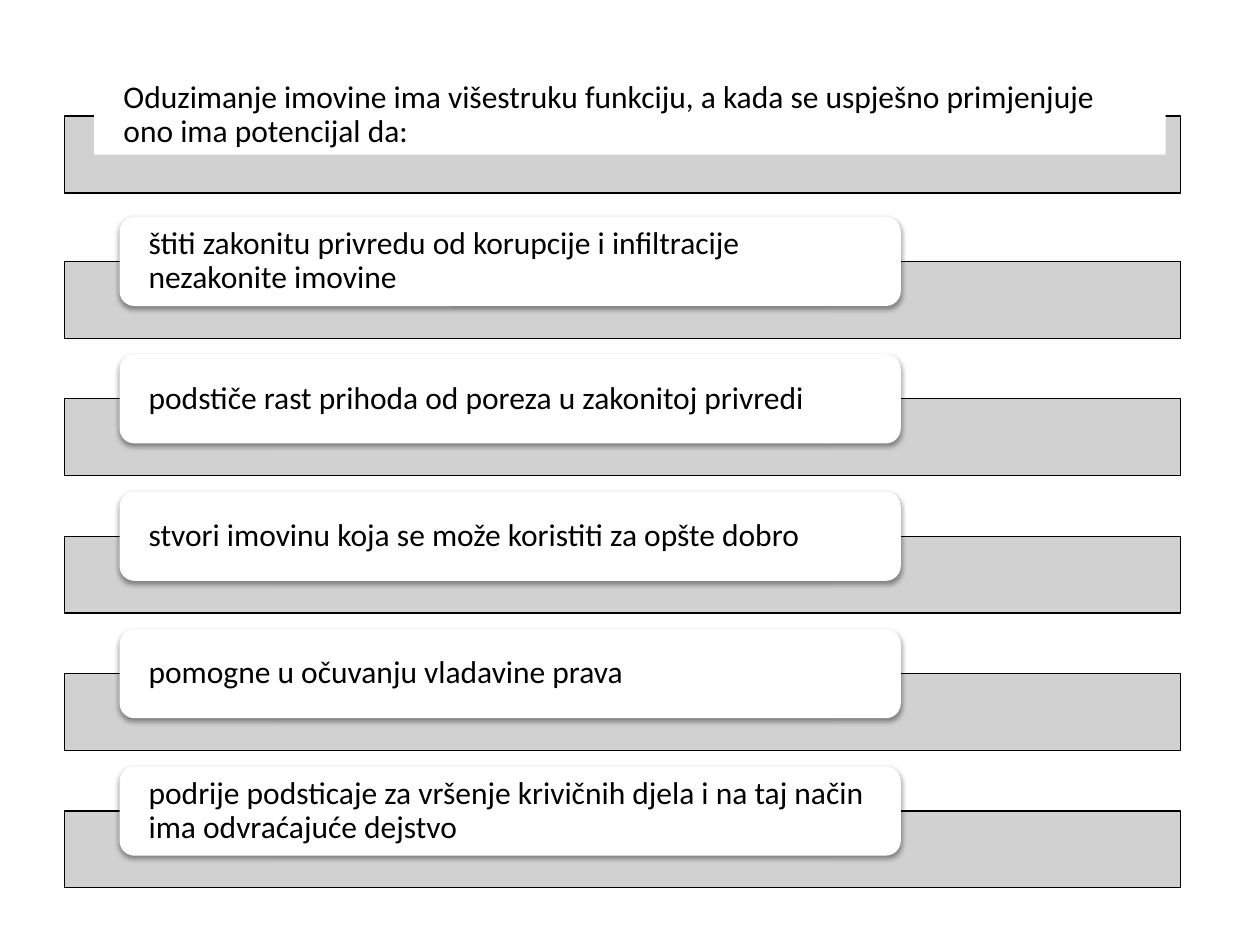
from dataclasses import dataclass

from lxml import etree
from pptx import Presentation
from pptx import util as u
from pptx.dml.color import RGBColor
from pptx.enum import shapes, text
from pptx.oxml import ns, parse_xml


@dataclass(frozen=True)
class Theme:
    font: str = "Calibri"
    size: float = 18
    ink: str = "000000"
    card: str = "FFFFFF"
    bar: str = "CCCCCC"
    bar_opacity: int = 90
    bar_line: float = 0.75
    shadow_opacity: int = 38


THEME = Theme()
HEADING = (
    "Oduzimanje imovine ima višestruku funkciju, a kada se uspješno "
    "primjenjuje ono ima potencijal da:"
)
BENEFITS = [
    "štiti zakonitu privredu od korupcije i infiltracije nezakonite imovine",
    "podstiče rast prihoda od poreza u zakonitoj privredi",
    "stvori imovinu koja se može koristiti za opšte dobro",
    "pomogne u očuvanju vladavine prava",
    "podrije podsticaje za vršenje krivičnih djela i na taj način ima odvraćajuće dejstvo",
]
FIRST_CARD_TOP = 4.37
ROW_PITCH = 2.77
BAR_DROP = 0.9


def add_block(slide, preset, left, top, width, height, color):
    block = slide.shapes.add_shape(
        preset, u.Cm(left), u.Cm(top), u.Cm(width), u.Cm(height)
    )
    block.shadow.inherit = False
    block.fill.solid()
    block.fill.fore_color.rgb = RGBColor.from_string(color)
    block.line.fill.background()
    return block


def add_bar(slide, top):
    bar = add_block(
        slide, shapes.MSO_SHAPE.RECTANGLE, 1.3, top, 22.5, 1.55, THEME.bar
    )
    bar.line.color.rgb = RGBColor.from_string(THEME.ink)
    bar.line.width = u.Pt(THEME.bar_line)
    tint = bar.fill._xPr.find(ns.qn("a:solidFill"))[0]
    alpha = etree.SubElement(tint, ns.qn("a:alpha"))
    alpha.set("val", str(THEME.bar_opacity * 1000))


def write(block, wording, inset):
    frame = block.text_frame
    frame.word_wrap = True
    frame.vertical_anchor = text.MSO_ANCHOR.MIDDLE
    frame.margin_left = frame.margin_right = u.Cm(inset)
    frame.margin_top = frame.margin_bottom = 0
    paragraph = frame.paragraphs[0]
    paragraph.text = wording
    paragraph.alignment = text.PP_ALIGN.LEFT
    paragraph.line_spacing = 0.9
    paragraph.font.name = THEME.font
    paragraph.font.size = u.Pt(THEME.size)
    paragraph.font.color.rgb = RGBColor.from_string(THEME.ink)


def cast_shadow(block):
    effects = block._element.spPr.find(ns.qn("a:effectLst"))
    effects.append(parse_xml(
        f'<a:outerShdw {ns.nsdecls("a")} blurRad="40000" dist="20000" '
        f'dir="5400000" rotWithShape="0"><a:srgbClr val="{THEME.ink}">'
        f'<a:alpha val="{THEME.shadow_opacity * 1000}"/>'
        '</a:srgbClr></a:outerShdw>'
    ))


def add_benefit(slide, top, wording):
    add_bar(slide, top + BAR_DROP)
    card = add_block(
        slide, shapes.MSO_SHAPE.ROUNDED_RECTANGLE, 2.41, top, 15.75, 1.8, THEME.card
    )
    cast_shadow(card)
    write(card, wording, 0.5)


def add_heading(slide):
    add_bar(slide, 2.34)
    heading = add_block(
        slide, shapes.MSO_SHAPE.RECTANGLE, 1.9, 1.52, 21.6, 1.6, THEME.card
    )
    write(heading, HEADING, 0.59)


def main():
    deck = Presentation()
    deck.slide_width, deck.slide_height = u.Cm(25.4), u.Cm(19.05)
    slide = deck.slides.add_slide(deck.slide_layouts[6])
    for row, benefit in enumerate(BENEFITS):
        add_benefit(slide, FIRST_CARD_TOP + row * ROW_PITCH, benefit)
    add_heading(slide)
    deck.save("out.pptx")


if __name__ == "__main__":
    main()
